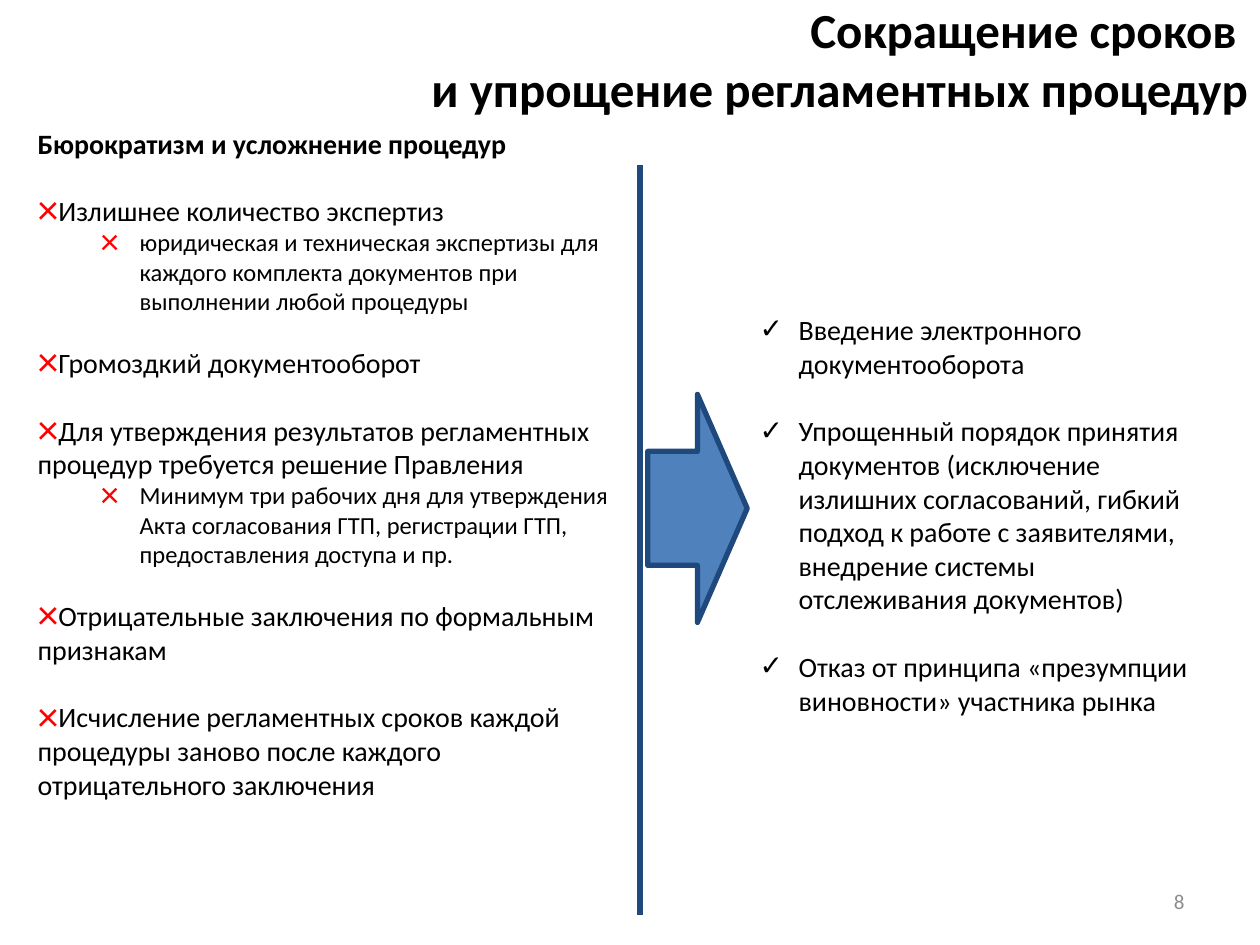
from dataclasses import dataclass

from lxml.etree import SubElement
from pptx import Presentation
from pptx.dml.color import RGBColor
from pptx.enum.shapes import MSO_CONNECTOR as Connector, MSO_SHAPE as Shape
from pptx.enum.text import MSO_ANCHOR as Anchor, MSO_AUTO_SIZE as AutoSize, PP_ALIGN as Align
from pptx.oxml.ns import qn
from pptx.util import Inches, Pt


@dataclass(frozen=True)
class Theme:
    font: str = "Calibri"
    text: str = "000000"
    muted: str = "8C8C8C"
    accent: str = "4F81BD"
    outline: str = "1F497D"
    cross: str = "FF0000"
    title_size: int = 28
    body_size: int = 16
    detail_size: int = 14
    number_size: int = 12
    line_width: int = 3
    line_height: float = 1.22  # line pitch as a share of the type size


@dataclass(frozen=True)
class Bullet:
    char: str
    color: str
    percent: int = 100


class SlideBuilder:
    def __init__(self, page, theme):
        self.page = page
        self.theme = theme

    def text_box(self, left, top, width, height, anchor=Anchor.TOP, skip=0):
        """Add a wrapping box; skip is a first gap in points above the text."""
        box = self.page.shapes.add_textbox(
            Inches(left), Inches(top), Inches(width), Inches(height))
        frame = box.text_frame
        frame.word_wrap = True
        frame.auto_size = AutoSize.NONE
        frame.vertical_anchor = anchor
        frame.margin_top = Inches(0.05) + Pt(skip)
        return frame

    def paragraph(self, frame, text, size, color=None, bold=False, align=Align.LEFT,
                  before=0, bullet=None, indent=0, hang=0):
        para = frame.paragraphs[0]
        if para.runs:
            para = frame.add_paragraph()
        para.text = text
        para.alignment = align
        para.space_before = Pt(before)
        font = para.font
        font.name, font.size, font.bold = self.theme.font, Pt(size), bold
        font.color.rgb = RGBColor.from_string(color or self.theme.text)
        if bullet:
            self.set_bullet(para, bullet, indent, hang)
        return para

    def set_bullet(self, para, bullet, indent, hang):
        props = para._p.get_or_add_pPr()
        props.set("marL", str(Inches(indent)))
        props.set("indent", str(-Inches(hang)))
        # Bullet children go ahead of the default run properties
        following = props.find(qn("a:defRPr"))
        color = SubElement(props, qn("a:buClr"))
        SubElement(color, qn("a:srgbClr"), val=bullet.color)
        SubElement(props, qn("a:buSzPct"), val=str(bullet.percent * 1000))
        SubElement(props, qn("a:buFont"), typeface=self.theme.font)
        SubElement(props, qn("a:buChar"), char=bullet.char)
        if following is not None:
            props.append(following)

    def style_line(self, line):
        line.color.rgb = RGBColor.from_string(self.theme.outline)
        line.width = Pt(self.theme.line_width)

    def divider(self, x, top, bottom):
        line = self.page.shapes.add_connector(
            Connector.STRAIGHT, Inches(x), Inches(top), Inches(x), Inches(bottom))
        self.style_line(line.line)
        SubElement(line._element.spPr, qn("a:effectLst"))

    def arrow(self, left, top, width, height):
        arrow = self.page.shapes.add_shape(
            Shape.RIGHT_ARROW, Inches(left), Inches(top), Inches(width), Inches(height))
        arrow.shadow.inherit = False
        arrow.fill.solid()
        arrow.fill.fore_color.rgb = RGBColor.from_string(self.theme.accent)
        self.style_line(arrow.line)


# Each problem with its optional detail
PROBLEMS = [
    ("Излишнее количество экспертиз",
     "юридическая и техническая экспертизы для каждого комплекта документов "
     "при выполнении любой процедуры"),
    ("Громоздкий документооборот", None),
    ("Для утверждения результатов регламентных процедур требуется решение Правления",
     "Минимум три рабочих дня для утверждения Акта согласования ГТП, "
     "регистрации ГТП, предоставления доступа и пр."),
    ("Отрицательные заключения по формальным признакам", None),
    ("Исчисление регламентных сроков каждой процедуры заново после каждого "
     "отрицательного заключения", None),
]
SOLUTIONS = [
    "Введение электронного документооборота",
    "Упрощенный порядок принятия документов (исключение излишних согласований, "
    "гибкий подход к работе с заявителями, внедрение системы отслеживания документов)",
    "Отказ от принципа «презумпции виновности» участника рынка",
]


def main():
    deck = Presentation()
    deck.slide_width, deck.slide_height = Inches(10), Inches(7.5)
    theme = Theme()
    builder = SlideBuilder(deck.slides.add_slide(deck.slide_layouts[6]), theme)
    body_gap = theme.body_size * theme.line_height
    detail_gap = theme.detail_size * theme.line_height
    cross = Bullet("×", theme.cross, 150)
    check = Bullet("✓", theme.text)

    # Problems on the left
    problems = builder.text_box(0.2, 0.68, 4.88, 6.3, skip=body_gap)
    builder.paragraph(problems, "Бюрократизм и усложнение процедур", theme.body_size, bold=True)
    gap = body_gap
    for problem, detail in PROBLEMS:
        builder.paragraph(problems, problem, theme.body_size, before=gap, bullet=cross)
        gap = body_gap
        if detail:
            builder.paragraph(problems, detail, theme.detail_size,
                              bullet=cross, indent=0.81, hang=0.31)
            gap = detail_gap

    # Title
    title = builder.text_box(1, 0, 9, 0.93, Anchor.MIDDLE)
    builder.paragraph(title, "Сокращение сроков \vи упрощение регламентных процедур",
                      theme.title_size, bold=True, align=Align.RIGHT)

    # Divider and arrow
    builder.divider(5.08, 1.31, 7.26)
    builder.arrow(5.14, 3.13, 0.79, 1.81)

    # Solutions on the right
    solutions = builder.text_box(5.93, 2.16, 3.71, 3.58, skip=body_gap)
    for index, solution in enumerate(SOLUTIONS):
        builder.paragraph(solutions, solution, theme.body_size, before=body_gap if index else 0,
                          bullet=check, indent=0.31, hang=0.31)

    # Page number
    number = builder.text_box(7.17, 6.95, 2.33, 0.4, Anchor.MIDDLE)
    builder.paragraph(number, "8", theme.number_size, theme.muted, align=Align.RIGHT)

    deck.save("out.pptx")


if __name__ == "__main__":
    main()
